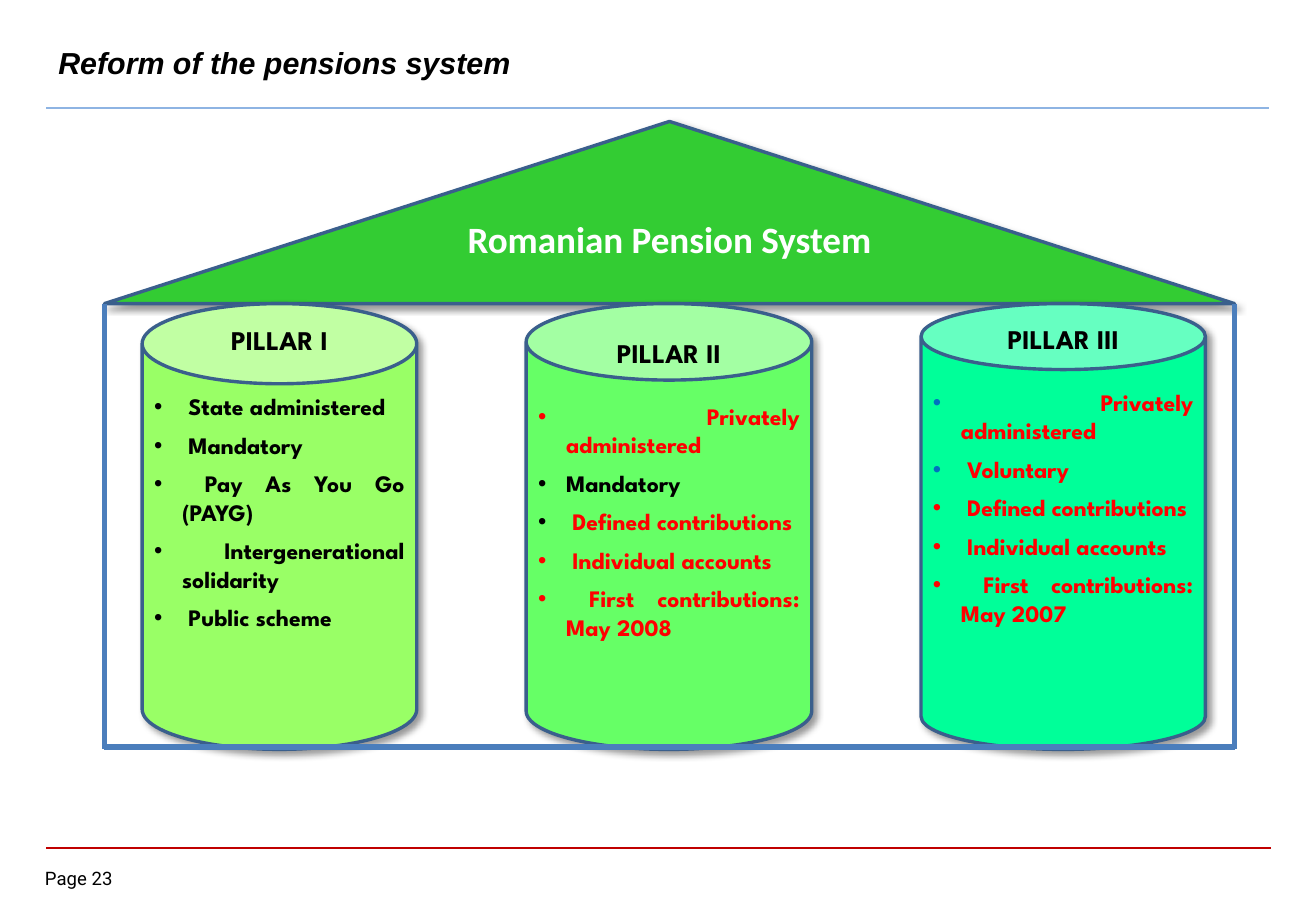
from lxml.etree import SubElement
from pptx import Presentation
from pptx.dml.color import RGBColor
from pptx.enum.shapes import MSO_CONNECTOR, MSO_SHAPE
from pptx.enum.text import MSO_ANCHOR, PP_ALIGN
from pptx.oxml.ns import qn
from pptx.util import Inches, Pt

BLACK = RGBColor(0, 0, 0)
WHITE = RGBColor(0xFF, 0xFF, 0xFF)
RED = RGBColor(0xFF, 0, 0)
BLUE = RGBColor(0x00, 0x70, 0xC0)
OUTLINE = RGBColor(0x3A, 0x5F, 0x8C)
WALL = RGBColor(0x4B, 0x7E, 0xBC)
HEADER_RULE = RGBColor(0x8E, 0xB4, 0xE3)
FOOTER_RULE = RGBColor(0xC0, 0, 0)
ROOF = RGBColor(0x33, 0xCC, 0x33)

TITLE = "Reform of the pensions system"
ROOF_TEXT = "Romanian Pension System"
PAGE = "Page 23"
PILLAR_FONT = "League Spartan"
LEFT, RIGHT, EAVES, FLOOR = 0.86, 10.16, 2.5, 6.17

# name, left, width, lid ratio, fill, name centre, list inset, (text, colour, bullet colour)
PILLARS = [
    ("PILLAR I", 1.17, 2.26, 0.292, RGBColor(0x99, 0xFF, 0x66), 2.8, 0.07, [
        (" State administered", BLACK, BLACK),
        (" Mandatory", BLACK, BLACK),
        (" Pay As You Go (PAYG)", BLACK, BLACK),
        (" Intergenerational solidarity", BLACK, BLACK),
        (" Public scheme", BLACK, BLACK)]),
    ("PILLAR II", 4.33, 2.35, 0.268, RGBColor(0x66, 0xFF, 0x66), 2.9, 0.18, [
        (" Privately administered", RED, RED),
        ("Mandatory", BLACK, BLACK),
        (" Defined contributions", RED, BLACK),
        (" Individual accounts", RED, RED),
        (" First contributions: May 2008", RED, RED)]),
    ("PILLAR III", 7.58, 2.34, 0.232, RGBColor(0x00, 0xFF, 0x99), 2.79, 0.15, [
        (" Privately administered", RED, BLUE),
        (" Voluntary", RED, BLUE),
        (" Defined contributions", RED, RED),
        (" Individual accounts", RED, RED),
        (" First contributions: May 2007", RED, RED)]),
]
LINES = [
    (0.38, 6.98, 10.46, 6.98, FOOTER_RULE, 1),
    (0.38, 0.89, 10.44, 0.89, HEADER_RULE, 1.5),
    (LEFT, EAVES, LEFT, FLOOR, WALL, 3),
    (RIGHT, EAVES, RIGHT, FLOOR, WALL, 3),
    (LEFT, 6.15, RIGHT, 6.15, WALL, 3),
]


def write(p, text, font, size, color, bold=True, italic=False):
    """Put formatted text in a paragraph."""
    p.text = text
    for r in p.runs:
        f = r.font
        f.name, f.size, f.bold, f.italic = font, Pt(size), bold, italic
        f.color.rgb = color


def add_solid(s, kind, x, y, w, h, fill):
    """Add an outlined shape with a soft drop shadow."""
    sp = s.shapes.add_shape(kind, Inches(x), Inches(y), Inches(w), Inches(h))
    sp.fill.solid()
    sp.fill.fore_color.rgb = fill
    sp.line.color.rgb = OUTLINE
    sp.line.width = Pt(2)
    sp.shadow.inherit = False
    effects = sp._element.spPr.find(qn("a:effectLst"))
    shadow = SubElement(effects, qn("a:outerShdw"), blurRad=str(Pt(4)), dist=str(Pt(3)),
                        dir="2700000", algn="tl", rotWithShape="0")
    color = SubElement(shadow, qn("a:srgbClr"), val="000000")
    SubElement(color, qn("a:alpha"), val="40000")
    sp.text_frame.word_wrap = True
    sp.text_frame.vertical_anchor = MSO_ANCHOR.TOP
    return sp


def add_label(s, x, y, w, h):
    """Add a text box without margins and return its frame."""
    tf = s.shapes.add_textbox(Inches(x), Inches(y), Inches(w), Inches(h)).text_frame
    tf.word_wrap = True
    tf.margin_left = tf.margin_right = tf.margin_top = tf.margin_bottom = 0
    return tf


def add_bullet(p, color):
    """Give a paragraph a coloured hanging bullet."""
    pPr = p._p.get_or_add_pPr()
    pPr.set("marL", str(Inches(0.23)))
    pPr.set("indent", str(-Inches(0.23)))
    SubElement(SubElement(pPr, qn("a:buClr")), qn("a:srgbClr"), val=str(color))
    SubElement(pPr, qn("a:buFont"), typeface="Arial")
    SubElement(pPr, qn("a:buChar"), char="•")


def add_pillar(s, name, x, w, lid, fill, name_y, inset, items):
    """Add a pillar with its name on the lid and its features below."""
    sp = add_solid(s, MSO_SHAPE.CAN, x, EAVES, w, FLOOR - EAVES, fill)
    sp.adjustments[0] = lid
    tf = sp.text_frame
    tf.margin_top = Inches(inset)
    for i, (text, color, bullet_color) in enumerate(items):
        p = tf.add_paragraph() if i else tf.paragraphs[0]
        p.alignment = PP_ALIGN.JUSTIFY
        p.space_after = Pt(6)
        add_bullet(p, bullet_color)
        write(p, text, PILLAR_FONT, 14, color)
    label = add_label(s, x, name_y - 0.15, w, 0.3)
    label.vertical_anchor = MSO_ANCHOR.MIDDLE
    label.paragraphs[0].alignment = PP_ALIGN.CENTER
    write(label.paragraphs[0], name, PILLAR_FONT, 16, BLACK)


def add_line(s, x1, y1, x2, y2, color, width):
    """Add a straight line without a shadow."""
    cn = s.shapes.add_connector(MSO_CONNECTOR.STRAIGHT, Inches(x1), Inches(y1),
                                Inches(x2), Inches(y2))
    cn.line.color.rgb = color
    cn.line.width = Pt(width)
    SubElement(cn._element.spPr, qn("a:effectLst"))


def main():
    """Build the pension system slide."""
    prs = Presentation()
    prs.slide_width, prs.slide_height = Inches(10.83), Inches(7.5)
    s = prs.slides.add_slide(prs.slide_layouts[5])

    title = s.shapes.title
    title.left, title.top = Inches(0.38), Inches(0.26)
    title.width, title.height = Inches(10.08), Inches(0.5)
    title.text_frame.vertical_anchor = MSO_ANCHOR.MIDDLE
    p = title.text_frame.paragraphs[0]
    p.alignment = PP_ALIGN.LEFT
    write(p, TITLE, "Arial", 18, BLACK, italic=True)

    roof = add_solid(s, MSO_SHAPE.ISOSCELES_TRIANGLE, LEFT, 1, RIGHT - LEFT, EAVES - 1, ROOF)
    roof.text_frame.margin_top = Inches(0.03)
    p = roof.text_frame.paragraphs[0]
    p.alignment = PP_ALIGN.CENTER
    write(p, ROOF_TEXT, "Calibri", 22, WHITE)

    for pillar in PILLARS:
        add_pillar(s, *pillar)
    for line in LINES:
        add_line(s, *line)
    write(add_label(s, 0.37, 7.14, 0.73, 0.22).paragraphs[0], PAGE, "Roboto", 11, BLACK, bold=False)
    prs.save("out.pptx")


if __name__ == "__main__":
    main()
